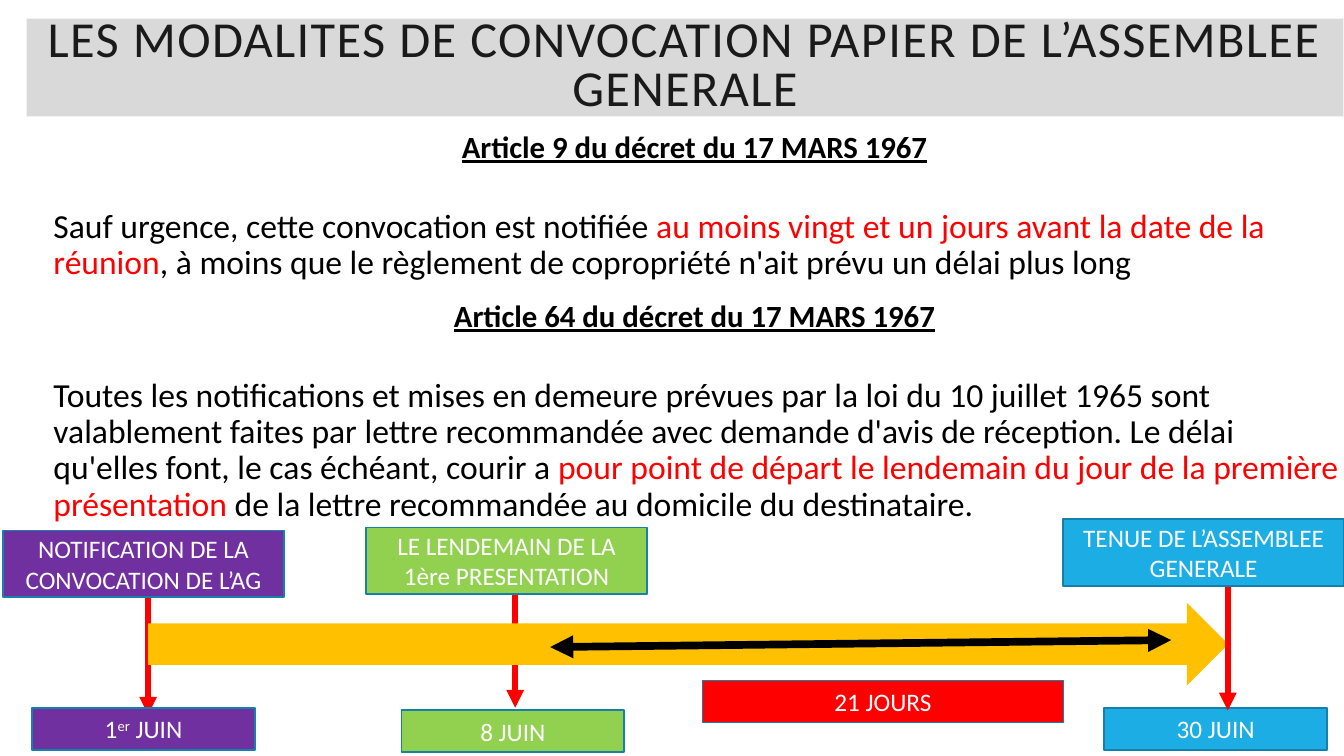
from dataclasses import dataclass

from lxml import etree
from pptx import Presentation
from pptx.dml.color import RGBColor
from pptx.enum.shapes import MSO_CONNECTOR, MSO_SHAPE
from pptx.enum.text import MSO_ANCHOR, PP_ALIGN
from pptx.oxml.ns import qn
from pptx.util import Pt

RECTANGLE = MSO_SHAPE.RECTANGLE
RIGHT_ARROW = MSO_SHAPE.RIGHT_ARROW
STRAIGHT = MSO_CONNECTOR.STRAIGHT
MIDDLE = MSO_ANCHOR.MIDDLE
CENTER = PP_ALIGN.CENTER
LEFT = PP_ALIGN.LEFT


@dataclass(frozen=True)
class Theme:
    font: str = "Calibri"
    title_size: float = 36
    heading_size: float = 22
    body_size: float = 24
    box_size: float = 18
    title_text: str = "1A1A1A"
    title_fill: str = "D9D9D9"
    title_border: str = "F2F2F2"
    text: str = "000000"
    white: str = "FFFFFF"
    red: str = "FF0000"
    purple: str = "7030A0"
    green: str = "92D050"
    blue: str = "1CADE4"
    border: str = "1580A9"
    band: str = "FFC000"


@dataclass(frozen=True)
class Span:
    text: str
    highlighted: bool = False
    raised: bool = False


@dataclass(frozen=True)
class Article:
    heading: str
    space_before: float
    spans: tuple[Span, ...]


@dataclass(frozen=True)
class Box:
    left: float
    top: float
    width: float
    height: float
    fill: str
    spans: tuple[Span, ...]


@dataclass(frozen=True)
class Arrow:
    start: tuple[float, float]
    end: tuple[float, float]
    color: str
    width: float
    both_ends: bool = False


THEME = Theme()
LABEL_SIZE = (200.9, 47.5)
DATE_SIZE = (159.1, 30.2)

TITLE = "LES MODALITES DE CONVOCATION PAPIER DE L’ASSEMBLEE GENERALE"
ARTICLES = (
    Article("Article 9 du décret du 17 MARS 1967", 0, (
        Span("Sauf urgence, cette convocation est notifiée "),
        Span("au moins vingt et un jours avant la date de la réunion", highlighted=True),
        Span(", à moins que le règlement de copropriété n'ait prévu un délai plus long"),
    )),
    Article("Article 64 du décret du 17 MARS 1967", 12, (
        Span("Toutes les notifications et mises en demeure prévues par la loi du "
             "10 juillet 1965 sont valablement faites par lettre recommandée avec "
             "demande d'avis de réception. Le délai qu'elles font, le cas échéant, courir a "),
        Span("pour point de départ le lendemain du jour de la première présentation",
             highlighted=True),
        Span(" de la lettre recommandée au domicile du destinataire."),
    )),
)
DATES = (
    Box(23, 505.5, *DATE_SIZE, THEME.purple,
        (Span("1"), Span("er", raised=True), Span(" JUIN"))),
    Box(286.8, 507, *DATE_SIZE, THEME.green, (Span("8 JUIN"),)),
    Box(788.8, 505.5, *DATE_SIZE, THEME.blue, (Span("30 JUIN"),)),
)
LABELS = (
    Box(2, 379, *LABEL_SIZE, THEME.purple, (Span("NOTIFICATION DE LA CONVOCATION DE L’AG"),)),
    Box(261.4, 376.8, *LABEL_SIZE, THEME.green, (Span("LE LENDEMAIN DE LA 1ère PRESENTATION"),)),
    Box(759.3, 371, *LABEL_SIZE, THEME.blue, (Span("TENUE DE L’ASSEMBLEE GENERALE"),)),
)
DURATION = Box(501.8, 486, 257.8, 30.2, THEME.red, (Span("21 JOURS"),))
NOTIFICATION_MARKER = Arrow((105.8, 412.5), (105.8, 510.5), THEME.red, 4.25)
PRESENTATION_MARKER = Arrow((368, 408), (368, 505.5), THEME.red, 4.25)
MEETING_MARKER = Arrow((877, 412.5), (877, 507.5), THEME.red, 4.25)
DURATION_SPAN = Arrow((393, 462.2), (836.6, 457.2), THEME.text, 5.5, both_ends=True)


def rgb(color: str) -> RGBColor:
    return RGBColor.from_string(color)


def add_spans(para, spans: tuple[Span, ...], size: float, color: str) -> None:
    para.font.name = THEME.font
    para.font.size = Pt(size)
    para.font.color.rgb = rgb(color)
    for item in spans:
        span = para.add_run()
        span.text = item.text
        if item.highlighted:
            span.font.color.rgb = rgb(THEME.red)
        if item.raised:
            span.font._element.set("baseline", "30000")


def draw_shape(page, kind, left: float, top: float, width: float, height: float, fill: str):
    shape = page.shapes.add_shape(kind, Pt(left), Pt(top), Pt(width), Pt(height))
    shape.shadow.inherit = False
    shape.fill.solid()
    shape.fill.fore_color.rgb = rgb(fill)
    shape.line.fill.background()
    return shape


def draw_box(page, box: Box, size: float = THEME.box_size, color: str = THEME.white,
             border: str = THEME.border, border_width: float = 1.25):
    shape = draw_shape(page, RECTANGLE, box.left, box.top, box.width, box.height, box.fill)
    shape.line.color.rgb = rgb(border)
    shape.line.width = Pt(border_width)
    frame = shape.text_frame
    frame.word_wrap = True
    frame.vertical_anchor = MIDDLE
    para = frame.paragraphs[0]
    para.alignment = CENTER
    add_spans(para, box.spans, size, color)
    return para


def draw_title(page) -> None:
    banner = Box(18.7, 13, 941.3, 70.5, THEME.title_fill, (Span(TITLE),))
    para = draw_box(page, banner, THEME.title_size, THEME.title_text, THEME.title_border, 0.75)
    para.line_spacing = 0.8
    para.runs[0].font._element.set("spc", "100")


def draw_articles(page) -> None:
    frame = page.shapes.add_textbox(Pt(27.4), Pt(90.7), Pt(937.4), Pt(342)).text_frame
    frame.word_wrap = True
    frame.margin_left = frame.margin_right = Pt(3.6)
    frame.margin_top = frame.margin_bottom = Pt(3.6)
    for index, article in enumerate(ARTICLES):
        heading = frame.add_paragraph() if index else frame.paragraphs[0]
        heading.alignment = CENTER
        heading.space_before = Pt(article.space_before)
        add_spans(heading, (Span(article.heading),), THEME.heading_size, THEME.text)
        heading.font.bold = heading.font.underline = True

        body = frame.add_paragraph()
        body.alignment = LEFT
        body.space_before = Pt(29.3)
        body._p.get_or_add_pPr().set("marL", str(Pt(7.2)))
        add_spans(body, article.spans, THEME.body_size, THEME.text)
        for para in (heading, body):
            para.line_spacing = 0.9
            para.space_after = Pt(2)


def draw_arrow(page, arrow: Arrow) -> None:
    x1, y1, x2, y2 = (Pt(value) for value in arrow.start + arrow.end)
    connector = page.shapes.add_connector(STRAIGHT, x1, y1, x2, y2)
    connector.line.color.rgb = rgb(arrow.color)
    connector.line.width = Pt(arrow.width)
    line = connector.line._get_or_add_ln()
    for end in ("a:headEnd", "a:tailEnd") if arrow.both_ends else ("a:tailEnd",):
        etree.SubElement(line, qn(end), type="triangle")
    etree.SubElement(connector._element.spPr, qn("a:effectLst"))


def draw_timeline(page) -> None:
    """Draw from back to front: the band hides two markers, the third crosses it."""
    draw_arrow(page, NOTIFICATION_MARKER)
    draw_arrow(page, PRESENTATION_MARKER)
    draw_shape(page, RIGHT_ARROW, 105.8, 430.6, 771.5, 59, THEME.band)
    for date in DATES:
        draw_box(page, date)
    draw_arrow(page, MEETING_MARKER)
    for box in (*LABELS, DURATION):
        draw_box(page, box)
    draw_arrow(page, DURATION_SPAN)


def main() -> None:
    deck = Presentation()
    deck.slide_width, deck.slide_height = Pt(960), Pt(540)
    page = deck.slides.add_slide(deck.slide_layouts[6])
    draw_title(page)
    draw_articles(page)
    draw_timeline(page)
    deck.save("out.pptx")


if __name__ == "__main__":
    main()
